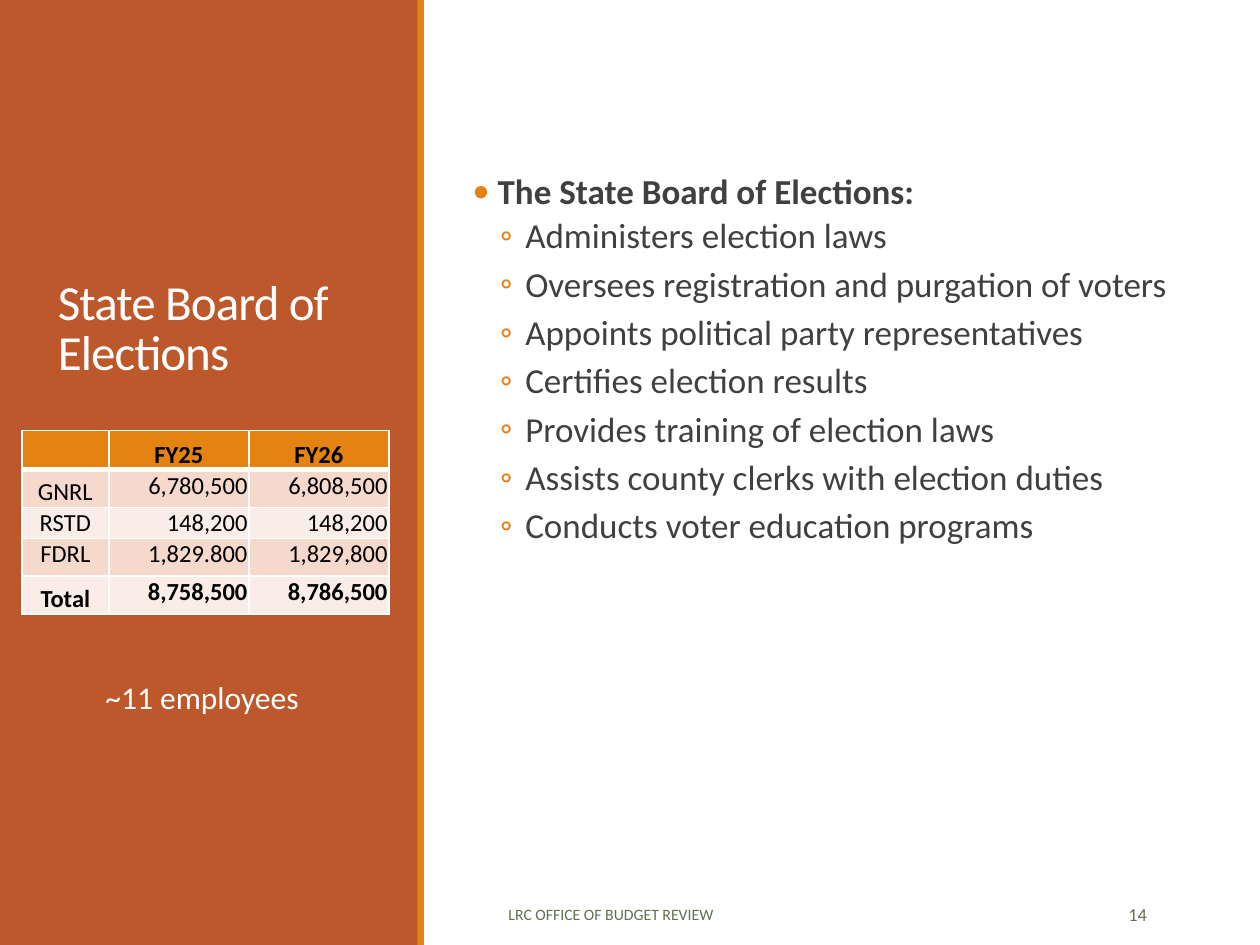
"""Build the State Board of Elections budget slide."""
from dataclasses import dataclass
from typing import Optional

from lxml import etree
from pptx import Presentation
from pptx.dml import color
from pptx.enum import shapes, text
from pptx.oxml import ns
from pptx.util import Pt

LEFT, CENTER, RIGHT = text.PP_ALIGN.LEFT, text.PP_ALIGN.CENTER, text.PP_ALIGN.RIGHT
TOP, MIDDLE, BOTTOM = text.MSO_ANCHOR.TOP, text.MSO_ANCHOR.MIDDLE, text.MSO_ANCHOR.BOTTOM


@dataclass(frozen=True)
class Theme:
    font: str = "Calibri"
    rust: str = "BD582C"
    orange: str = "E48312"
    white: str = "FFFFFF"
    black: str = "000000"
    body: str = "404040"
    footer: str = "637052"
    bands: tuple = ("F5D9CC", "FAEDE7")
    title_size: float = 28
    body_size: float = 20
    staff_size: float = 18
    table_size: float = 14
    number_size: float = 10.5
    footer_size: float = 9


@dataclass(frozen=True)
class Frame:
    left: float
    top: float
    width: float
    height: float

    def lengths(self) -> tuple:
        return Pt(self.left), Pt(self.top), Pt(self.width), Pt(self.height)


@dataclass(frozen=True)
class Style:
    size: float
    color: str
    bold: bool = False
    tracking: Optional[int] = None


@dataclass(frozen=True)
class Label:
    words: str
    frame: Frame
    style: Style
    align: int = LEFT
    anchor: int = TOP
    line_spacing: float = 1.0


@dataclass(frozen=True)
class Bullet:
    words: str
    mark: str
    indent: float
    before: float
    after: float
    bold: bool = False


THEME = Theme()
HANGING = 14.4
PANELS = (
    (Frame(0, 0, 239, 540), THEME.rust),
    (Frame(238.5, 0, 3.8, 540), THEME.orange),
)
LABELS = (
    Label("State Board of Elections", Frame(26, 150, 188.6, 71),
          Style(THEME.title_size, THEME.white, tracking=-50), anchor=BOTTOM, line_spacing=0.85),
    Label("LRC OFFICE OF BUDGET REVIEW", Frame(283.5, 508, 274.5, 29),
          Style(THEME.footer_size, THEME.footer), anchor=MIDDLE),
    Label("14", Frame(584.5, 508, 78, 29),
          Style(THEME.number_size, THEME.footer), RIGHT, MIDDLE),
    Label("~11 employees", Frame(16.5, 384, 198, 29),
          Style(THEME.staff_size, THEME.white), CENTER),
)
DUTIES = (
    "Administers election laws",
    "Oversees registration and purgation of voters",
    "Appoints political party representatives",
    "Certifies election results",
    "Provides training of election laws",
    "Assists county clerks with election duties",
    "Conducts voter education programs",
)
BULLETS = [Bullet("The State Board of Elections:", "•", 14.4, 12, 2, True)]
BULLETS += [Bullet(duty, "◦", 30.2, 2, 4) for duty in DUTIES]
BUDGET = (
    ("", "FY25", "FY26"),
    ("GNRL", "6,780,500", "6,808,500"),
    ("RSTD", "148,200", "148,200"),
    ("FDRL", "1,829.800", "1,829,800"),
    ("Total", "8,758,500", "8,786,500"),
)
COLUMN_WIDTHS = (49.7, 80, 80)
ROW_HEIGHTS = (21.6, 21.6, 17.8, 21.6, 21.6)


def add_span(para, words: str, style: Style) -> None:
    span = para.add_run()
    span.text = words
    span.font.name = THEME.font
    span.font.size = Pt(style.size)
    span.font.bold = style.bold
    span.font.color.rgb = color.RGBColor.from_string(style.color)
    if style.tracking is not None:
        span.font._element.set("spc", str(style.tracking))


def add_panel(page, frame: Frame, fill: str) -> None:
    panel = page.shapes.add_shape(shapes.MSO_SHAPE.RECTANGLE, *frame.lengths())
    panel.shadow.inherit = False
    panel.fill.solid()
    panel.fill.fore_color.rgb = color.RGBColor.from_string(fill)
    panel.line.fill.background()


def add_label(page, label: Label) -> None:
    box = page.shapes.add_textbox(*label.frame.lengths()).text_frame
    box.word_wrap = True
    box.vertical_anchor = label.anchor
    para = box.paragraphs[0]
    para.alignment = label.align
    para.line_spacing = label.line_spacing
    add_span(para, label.words, label.style)


def add_bullets(page, frame: Frame, bullets: list) -> None:
    box = page.shapes.add_textbox(*frame.lengths()).text_frame
    box.word_wrap = True
    box.margin_left = box.margin_right = 0
    for index, bullet in enumerate(bullets):
        para = box.add_paragraph() if index else box.paragraphs[0]
        para.line_spacing = 0.9
        para.space_before, para.space_after = Pt(bullet.before), Pt(bullet.after)
        add_span(para, bullet.words, Style(THEME.body_size, THEME.body, bullet.bold))
        props = para._p.get_or_add_pPr()
        props.set("marL", str(Pt(bullet.indent)))
        props.set("indent", str(-Pt(HANGING)))
        tint = etree.SubElement(props, ns.qn("a:buClr"))
        etree.SubElement(tint, ns.qn("a:srgbClr"), val=THEME.orange)
        etree.SubElement(props, ns.qn("a:buFont"), typeface=THEME.font)
        etree.SubElement(props, ns.qn("a:buChar"), char=bullet.mark)


def add_borders(cell, row: int) -> None:
    props = cell._tc.get_or_add_tcPr()
    widths = {"L": 1, "R": 1, "T": 3 if row == 1 else 1, "B": 3 if row == 0 else 1}
    for side, width in widths.items():
        line = etree.SubElement(props, ns.qn(f"a:ln{side}"), w=str(Pt(width)))
        fill = etree.SubElement(line, ns.qn("a:solidFill"))
        etree.SubElement(fill, ns.qn("a:srgbClr"), val=THEME.white)


def add_budget(page, frame: Frame) -> None:
    grid = page.shapes.add_table(len(BUDGET), len(COLUMN_WIDTHS), *frame.lengths()).table
    for column, width in zip(grid.columns, COLUMN_WIDTHS):
        column.width = Pt(width)
    for row, (values, height) in enumerate(zip(BUDGET, ROW_HEIGHTS)):
        grid.rows[row].height = Pt(height)
        fill = THEME.bands[(row - 1) % 2] if row else THEME.orange
        style = Style(THEME.table_size, THEME.black, row in (0, len(BUDGET) - 1))
        for column, words in enumerate(values):
            cell = grid.cell(row, column)
            add_borders(cell, row)
            cell.fill.solid()
            cell.fill.fore_color.rgb = color.RGBColor.from_string(fill)
            cell.margin_left = cell.margin_right = cell.margin_top = Pt(0.7)
            cell.margin_bottom = 0
            heading = row == 0 or column == 0
            cell.vertical_anchor = BOTTOM if heading and values[0] != "FDRL" else TOP
            para = cell.text_frame.paragraphs[0]
            para.alignment = CENTER if heading else RIGHT
            add_span(para, words, style)


def main() -> None:
    deck = Presentation()
    deck.slide_width, deck.slide_height = Pt(720), Pt(540)
    page = deck.slides.add_slide(deck.slide_layouts[6])
    for frame, fill in PANELS:
        add_panel(page, frame, fill)
    for label in LABELS:
        add_label(page, label)
    add_bullets(page, Frame(270, 95.8, 405.4, 228), BULLETS)
    add_budget(page, Frame(12.5, 246, sum(COLUMN_WIDTHS), sum(ROW_HEIGHTS)))
    deck.save("out.pptx")


if __name__ == "__main__":
    main()
